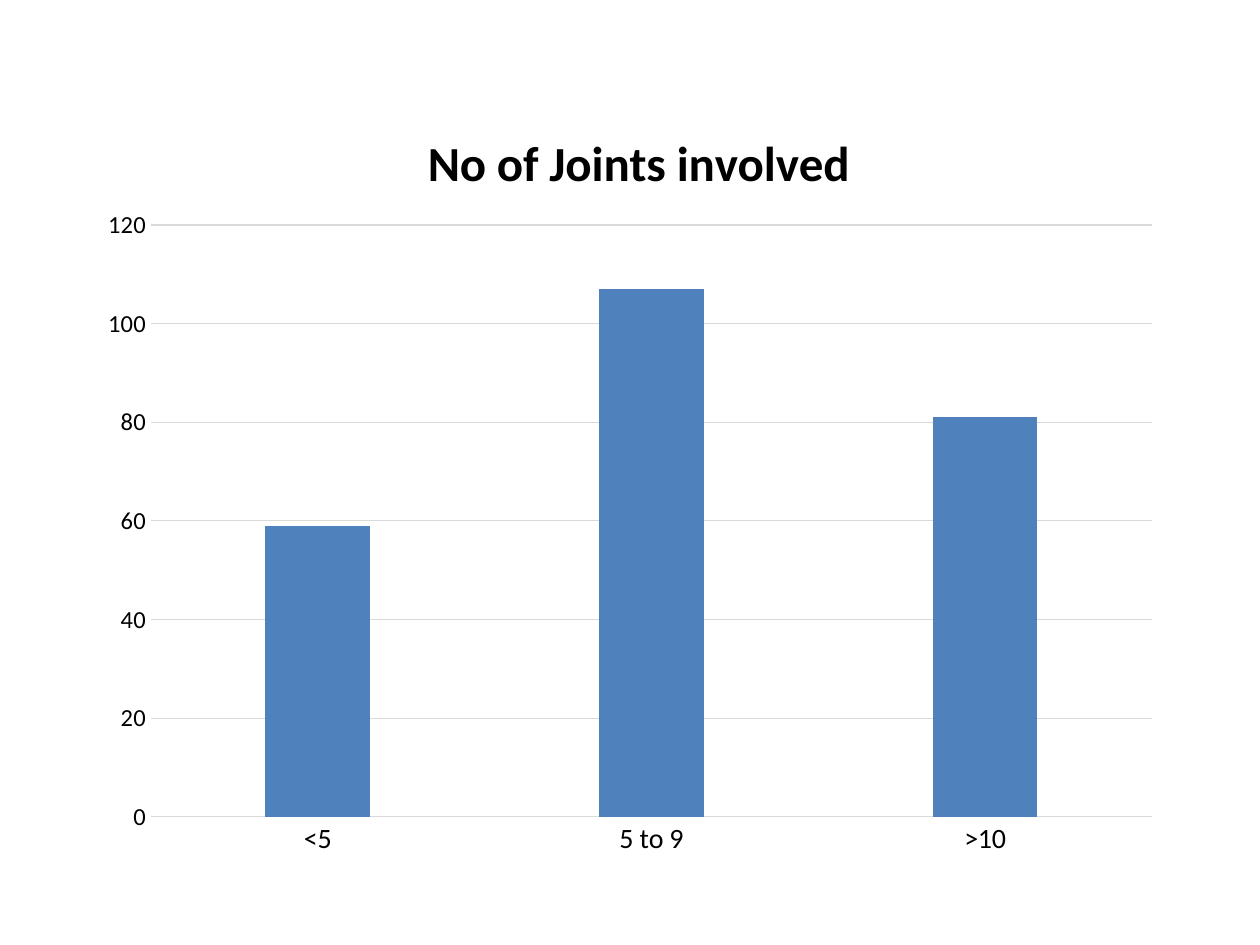
from dataclasses import dataclass
from typing import NamedTuple

from lxml.etree import SubElement
from pptx import Presentation
from pptx.chart.axis import _BaseAxis
from pptx.chart.chart import Chart
from pptx.chart.data import CategoryChartData
from pptx.dml.color import RGBColor
from pptx.enum.chart import XL_CHART_TYPE, XL_TICK_MARK
from pptx.oxml.ns import qn
from pptx.util import Emu, Pt


class Box(NamedTuple):
    x: int
    y: int
    w: int
    h: int


class Bar(NamedTuple):
    name: str
    count: int


@dataclass(frozen=True)
class Theme:
    font: str = "Calibri"
    ink: RGBColor = RGBColor(0, 0, 0)
    grid: RGBColor = RGBColor(0xD9, 0xD9, 0xD9)
    fill: RGBColor = RGBColor(0x4F, 0x81, 0xBD)
    base: int = 12
    head: int = 28
    cat: int = 16
    val: int = 14
    line: float = 0.75


THEME = Theme()
SCALE = 914400 / 126
PAGE = Box(0, 0, 1260, 945)
FRAME = Box(87, 84, 1086, 788)
PLOT = Box(151, 225, 1001, 592)
HEAD = Box(419, 121, 421, 60)
BARS = [Bar("<5", 59), Bar("5 to 9", 107), Bar(">10", 81)]


def px(size: int) -> Emu:
    return Emu(round(size * SCALE))


def style(font, size: int, bold: bool = False) -> None:
    font.name = THEME.font
    font.size = Pt(size)
    font.bold = bold
    font.color.rgb = THEME.ink


def rule(line) -> None:
    line.color.rgb = THEME.grid
    line.width = Pt(THEME.line)


def place(part, box: Box, spot: int, sized: bool) -> None:
    for old in part.findall(qn("c:layout")):
        part.remove(old)
    lay = SubElement(part, qn("c:layout"))
    part.insert(spot, lay)
    man = SubElement(lay, qn("c:manualLayout"))
    pairs = [("xMode", "edge"), ("yMode", "edge"),
             ("x", (box.x - FRAME.x) / FRAME.w),
             ("y", (box.y - FRAME.y) / FRAME.h)]
    if sized:
        pairs.insert(0, ("layoutTarget", "inner"))
        pairs += [("w", box.w / FRAME.w), ("h", box.h / FRAME.h)]
    for tag, val in pairs:
        SubElement(man, qn(f"c:{tag}")).set("val", str(val))


def set_axis(axis: _BaseAxis, size: int) -> None:
    axis.major_tick_mark = XL_TICK_MARK.NONE
    axis.minor_tick_mark = XL_TICK_MARK.NONE
    style(axis.tick_labels.font, size)


def set_title(chart: Chart, text: str) -> None:
    chart.has_title = True
    title = chart.chart_title
    title.include_in_layout = False
    para = title.text_frame.paragraphs[0]
    para.text = text
    style(para.font, THEME.head, True)
    place(title._element, HEAD, 1, False)


def add_bars(slide, bars: list[Bar]) -> Chart:
    data = CategoryChartData()
    data.categories = [bar.name for bar in bars]
    data.add_series("Series 1", [bar.count for bar in bars])
    chart = slide.shapes.add_chart(
        XL_CHART_TYPE.COLUMN_CLUSTERED, *map(px, FRAME), data).chart
    style(chart.font, THEME.base)
    chart.has_legend = False
    plot = chart.plots[0]
    plot.gap_width = 219
    plot.overlap = -27
    plot.vary_by_categories = False
    fill = plot.series[0].format.fill
    fill.solid()
    fill.fore_color.rgb = THEME.fill
    set_axis(chart.category_axis, THEME.cat)
    rule(chart.category_axis.format.line)
    axis = chart.value_axis
    set_axis(axis, THEME.val)
    axis.minimum_scale, axis.maximum_scale, axis.major_unit = 0, 120, 20
    axis.format.line.fill.background()
    axis.has_major_gridlines = True
    rule(axis.major_gridlines.format.line)
    place(chart._chartSpace.chart.plotArea, PLOT, 0, True)
    return chart


def main() -> None:
    deck = Presentation()
    deck.slide_width, deck.slide_height = px(PAGE.w), px(PAGE.h)
    slide = deck.slides.add_slide(deck.slide_layouts[6])
    chart = add_bars(slide, BARS)
    set_title(chart, "No of Joints involved")
    deck.save("out.pptx")


if __name__ == "__main__":
    main()
